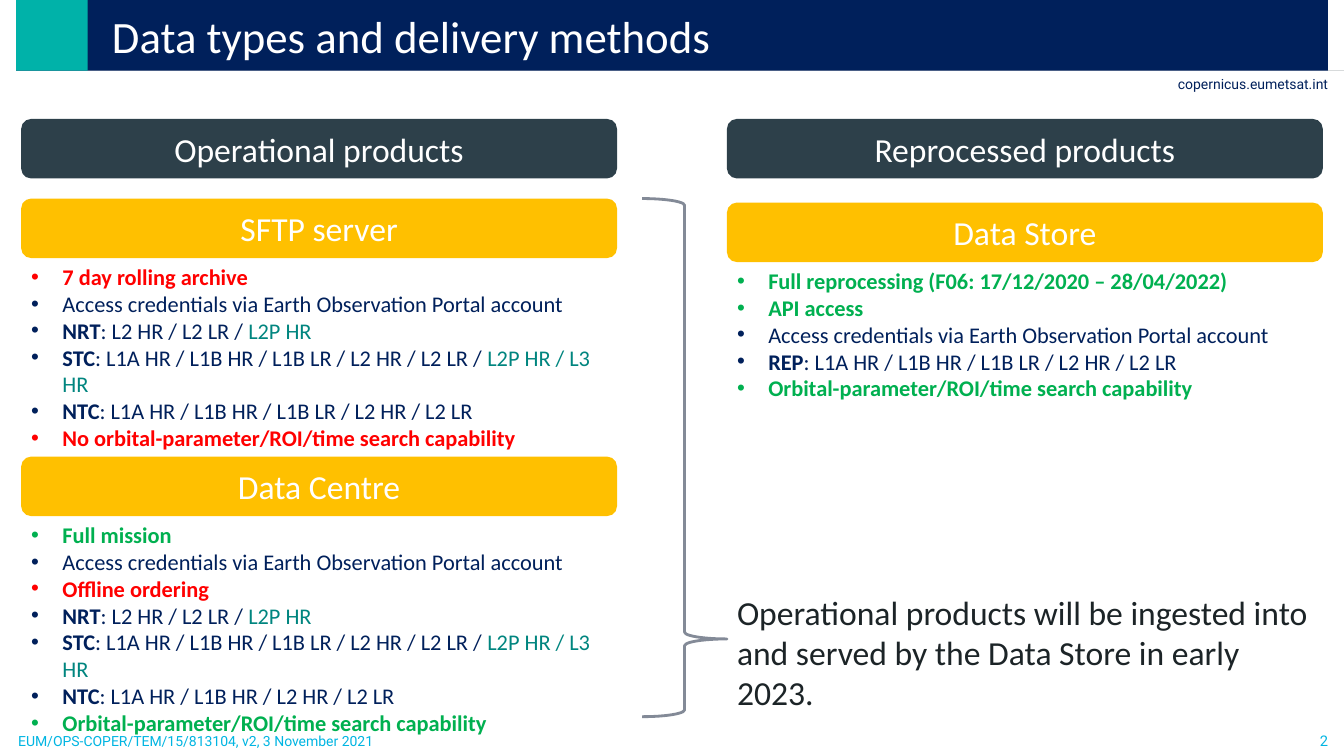
from lxml import etree
from pptx import Presentation
from pptx.dml.color import RGBColor
from pptx.enum.shapes import MSO_CONNECTOR, MSO_SHAPE
from pptx.enum.text import MSO_ANCHOR, MSO_AUTO_SIZE, PP_ALIGN
from pptx.oxml.ns import qn
from pptx.util import Inches, Pt

LEFT, CENTER, RIGHT = PP_ALIGN.LEFT, PP_ALIGN.CENTER, PP_ALIGN.RIGHT
TOP, MIDDLE = MSO_ANCHOR.TOP, MSO_ANCHOR.MIDDLE
RECTANGLE, ROUNDED = MSO_SHAPE.RECTANGLE, MSO_SHAPE.ROUNDED_RECTANGLE

THEME = {
    "navy": "00205B", "turquoise": "00B2A9", "cyan": "00B5E2", "white": "FFFFFF",
    "slate": "2D404A", "amber": "FFC000", "red": "FF0000", "green": "00B050",
    "teal": "00857F", "ink": "1C2427", "brace": "838A97", "rule": "38484E",
    "title": 32, "heading": 24, "list": 16, "page": 10.5, "small": 10,
    "body_font": "Calibri", "furniture_font": "Roboto",
}
STYLES = {
    "plain": ("navy", False),
    "label": ("navy", True),
    "extra": ("teal", False),
    "pro": ("green", True),
    "con": ("red", True),
}

WIDTH, HEIGHT = 13.33, 7.5
COLUMNS = (0.21, 7.21)
COLUMN_WIDTH = 5.91
HEADING_HEIGHT = 0.59
BANNER_LEFT, BANNER_HEIGHT = 0.16, 0.71
BRACE_LEFT, BRACE_TOP, BRACE_BOTTOM = 6.37, 1.97, 7.11


def color(name):
    return RGBColor.from_string(THEME[name])


def write(shape, paragraphs, size="list", font="body_font", align=LEFT, anchor=TOP,
          insets=(0.1, 0.05, 0.1, 0.05), indent=0, bullet=False, wrap=True):
    frame = shape.text_frame
    frame.auto_size = MSO_AUTO_SIZE.NONE
    frame.word_wrap = wrap
    frame.vertical_anchor = anchor
    frame.margin_left, frame.margin_top, frame.margin_right, frame.margin_bottom = map(Inches, insets)
    for index, runs in enumerate(paragraphs):
        paragraph = frame.add_paragraph() if index else frame.paragraphs[0]
        paragraph.alignment = align
        paragraph.space_before = Pt(0)
        properties = paragraph._p.get_or_add_pPr()
        properties.set("marL", str(Inches(indent)))
        properties.set("indent", str(-Inches(indent) if bullet else 0))
        if bullet:
            etree.SubElement(properties, qn("a:buFont")).set("typeface", "Arial")
            etree.SubElement(properties, qn("a:buChar")).set("char", "•")
        else:
            etree.SubElement(properties, qn("a:buNone"))
        for text, style in runs:
            color_name, bold = STYLES.get(style, (style, False))
            run = paragraph.add_run()
            run.text = text
            run.font.name = THEME[font]
            run.font.size = Pt(THEME[size])
            run.font.bold = bold
            run.font.color.rgb = color(color_name)


def add_block(kind, left, top, width, height, fill):
    shape = slide.shapes.add_shape(kind, *map(Inches, (left, top, width, height)))
    shape.shadow.inherit = False
    shape.fill.solid()
    shape.fill.fore_color.rgb = color(fill)
    shape.line.fill.background()
    return shape


presentation = Presentation()
presentation.slide_width, presentation.slide_height = Inches(WIDTH), Inches(HEIGHT)
slide = presentation.slides.add_slide(presentation.slide_layouts.get_by_name("Comparison"))

rule = slide.shapes.add_connector(
    MSO_CONNECTOR.STRAIGHT, Inches(BANNER_LEFT), Inches(0.7), Inches(WIDTH), Inches(0.7))
rule.line.width = Pt(0.5)
rule.line.fill.solid()
rule.line.color.rgb = color("rule")
rule_color = rule.line._ln.find(".//" + qn("a:srgbClr"))
etree.SubElement(rule_color, qn("a:alpha")).set("val", "20000")
etree.SubElement(rule._element.spPr, qn("a:effectLst"))

add_block(RECTANGLE, BANNER_LEFT, -0.01, WIDTH - 2 * BANNER_LEFT, BANNER_HEIGHT, "navy")
add_block(RECTANGLE, BANNER_LEFT, -0.01, BANNER_HEIGHT, BANNER_HEIGHT, "turquoise")

FURNITURE = [
    ("copernicus.eumetsat.int", (11.56, 0.7, 1.71, 0.27), "navy",
     {"size": "small", "align": RIGHT, "wrap": False}),
    ("EUM/OPS-COPER/TEM/15/813104, v2, 3 November 2021", (0.18, 7.27, 5.06, 0.17), "cyan",
     {"size": "small", "insets": (0, 0, 0, 0)}),
    ("2", (12.6, 7.21, 0.67, 0.29), "cyan", {"size": "page", "align": RIGHT}),
]
for text, box, color_name, text_format in FURNITURE:
    label = slide.shapes.add_textbox(*map(Inches, box))
    write(label, [[(text, color_name)]], font="furniture_font", **text_format)

title = slide.shapes.title
title.left, title.top, title.width, title.height = map(Inches, (0.87, 0, WIDTH - 0.87, 0.7))
write(title, [[("Data types and delivery methods", "white")]], size="title",
      anchor=MIDDLE, insets=(0, 0.04, 0.04, 0.04), indent=0.24)
slide.shapes.element.append(title.element)

HEADINGS = [
    ("Operational products", 0, 1.18, "slate"),
    ("Reprocessed products", 1, 1.18, "slate"),
    ("SFTP server", 0, 1.97, "amber"),
    ("Data Centre", 0, 4.53, "amber"),
    ("Data Store", 1, 2.01, "amber"),
]
for text, column, top, fill in HEADINGS:
    heading = add_block(ROUNDED, COLUMNS[column], top, COLUMN_WIDTH, HEADING_HEIGHT, fill)
    write(heading, [[(text, "white")]], size="heading", align=CENTER, anchor=MIDDLE,
          insets=(0.04, 0.04, 0.04, 0.04))

ACCESS = [("Access credentials via Earth Observation Portal account", "plain")]
NRT = [("NRT", "label"), (": L2 HR / L2 LR / ", "plain"), ("L2P HR", "extra")]
ALL_LEVELS = (": L1A HR / L1B HR / L1B LR / L2 HR / L2 LR", "plain")
STC = [("STC", "label"), ALL_LEVELS, (" / ", "plain"), ("L2P HR / L3 HR", "extra")]
SEARCH = [("Orbital-parameter/ROI/time search capability", "pro")]

SFTP_SERVER = [
    [("7 day rolling archive", "con")],
    ACCESS,
    NRT,
    STC,
    [("NTC", "label"), ALL_LEVELS],
    [("No orbital-parameter/ROI/time search capability", "con")],
]
DATA_CENTRE = [
    [("Full mission", "pro")],
    ACCESS,
    [("Offline ordering", "con")],
    NRT,
    STC,
    [("NTC", "label"), (": L1A HR / L1B HR / L2 HR / L2 LR", "plain")],
    SEARCH,
]
DATA_STORE = [
    [("Full reprocessing (F06: 17/12/2020 – 28/04/2022)", "pro")],
    [("API access", "pro")],
    ACCESS,
    [("REP", "label"), ALL_LEVELS],
    SEARCH,
]
OUTLOOK = [[("Operational products will be ingested into and served by the Data Store "
             "in early 2023.", "ink")]]
BULLETED = {"indent": 0.31, "bullet": True}
BODIES = [
    (1, 0, 2.56, 1.97, SFTP_SERVER, BULLETED),
    (2, 0, 5.12, 2.2, DATA_CENTRE, BULLETED),
    (4, 1, 2.6, 1.5, DATA_STORE, BULLETED),
    (3, 1, 5.82, 1.3, OUTLOOK, {"size": "heading"}),
]
for index, column, top, height, paragraphs, text_format in BODIES:
    body = slide.placeholders[index]
    body.left, body.top, body.width, body.height = map(
        Inches, (COLUMNS[column], top, COLUMN_WIDTH, height))
    write(body, paragraphs, **text_format)

brace = add_block(MSO_SHAPE.RIGHT_BRACE, BRACE_LEFT, BRACE_TOP, COLUMNS[1] - BRACE_LEFT,
                  BRACE_BOTTOM - BRACE_TOP, "white")
brace.fill.background()
brace.line.color.rgb = color("brace")
brace.line.width = Pt(2)
brace.adjustments[0], brace.adjustments[1] = 0.08, 0.85

presentation.save("out.pptx")
